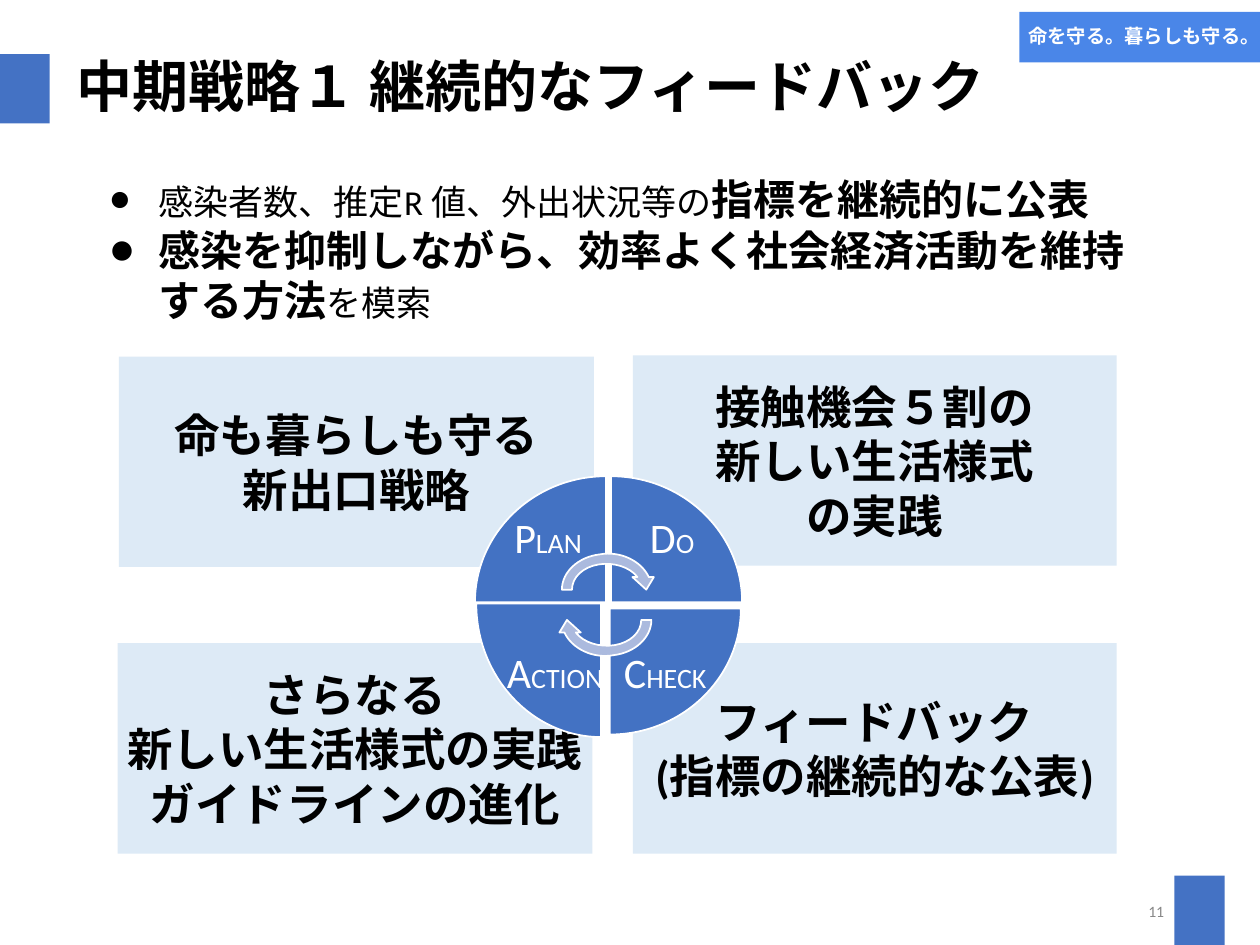
import pptx
import pptx.util
import pptx.dml.color
import pptx.enum.lang
import pptx.enum.shapes
import pptx.enum.text
import pptx.oxml
import pptx.oxml.ns

HUES = {"blue": "4472C4", "pie": "4372C3", "pale": "DDEAF6", "arrow": "ABBADE",
        "tag": "4A86E8", "ink": "000000", "grey": "888888", "white": "FFFFFF"}
CELL = pptx.util.Inches(10) // 100
ALIGN = pptx.enum.text.PP_ALIGN
ANCHOR = pptx.enum.text.MSO_ANCHOR

CARDS = [
    ((9.44, 28.3, 37.7, 16.7), ["命も暮らしも守る", "新出口戦略"]),
    ((50.23, 51.05, 38.4, 16.7), ["フィードバック", "(指標の継続的な公表)"]),
    ((9.33, 51.05, 37.7, 16.7), ["さらなる", "新しい生活様式の実践", "ガイドラインの進化"]),
    ((50.23, 28.2, 38.4, 16.7), ["接触機会５割の", "新しい生活様式", "の実践"]),
]
PIES = [
    ((48.1, 47.8), (-10.4, -10), (38.9, 40.7, 9.2, 7.1), "PLAN"),
    ((48.5, 47.8), (10.4, -10), (48.5, 40.7, 9.7, 7.1), "DO"),
    ((48.4, 48.3), (10.4, 10), (47.6, 48.3, 10.4, 7.1), "CHECK"),
    ((47.7, 47.9), (-9.9, 10.6), (38.3, 48.3, 11.5, 7.1), "ACTION"),
]
BEND = [
    [(44.6, 46.8)],
    [(44.6, 45.4), (45.9, 44.2), (47.6, 44)],
    [(49.2, 43.7), (50.9, 44.5), (51.5, 45.8)],
    [(51.9, 45.8)], [(51.3, 46.8)], [(50.2, 45.8)], [(50.6, 45.8)],
    [(50, 45), (48.7, 44.6), (47.5, 44.8)],
    [(46.3, 45), (45.4, 45.8), (45.4, 46.8)],
]


def color(name):
    """Return the named colour."""
    return pptx.dml.color.RGBColor.from_string(HUES[name])


def place(box):
    """Turn grid cells into slide lengths."""
    return [round(n * CELL) for n in box]


def write(shape, paras, size=18, hue="ink", bold=False, align=ALIGN.LEFT,
          anchor=ANCHOR.MIDDLE, inset=(0.7, 0.3), lead=None, bullet=None):
    """Fill a shape with paragraphs of strings or (text, size, bold) runs."""
    frame = shape.text_frame
    frame.word_wrap = True
    frame.vertical_anchor = anchor
    frame.margin_left = frame.margin_right = round(inset[0] * CELL)
    frame.margin_top = frame.margin_bottom = round(inset[1] * CELL)
    for i, para in enumerate(paras):
        line = frame.add_paragraph() if i else frame.paragraphs[0]
        line.alignment = align
        if lead:
            line.line_spacing = lead
        if bullet:
            mark(line, bullet)
        for words, points, heavy in [(para, size, bold)] if isinstance(para, str) else para:
            run = line.add_run()
            run.text = words
            font = run.font
            font.name = "Calibri"
            font.size = pptx.util.Pt(points)
            font.bold = heavy
            font.color.rgb = color(hue)
            font.language_id = pptx.enum.lang.MSO_LANGUAGE_ID.JAPANESE


def mark(line, sign):
    """Give a paragraph a bullet with a hanging indent."""
    props = line._p.get_or_add_pPr()
    props.set("marL", str(5 * CELL))
    props.set("indent", str(round(-3.9 * CELL)))
    space = pptx.oxml.ns.nsdecls("a")
    for part in (f'<a:buClr {space}><a:srgbClr val="{HUES["ink"]}"/></a:buClr>',
                 f'<a:buFont {space} typeface="Calibri"/>',
                 f'<a:buChar {space} char="{sign}"/>'):
        props.append(pptx.oxml.parse_xml(part))


def paint(shape, fill, edge=None):
    """Set a flat fill and an optional thin edge."""
    shape.shadow.inherit = False
    shape.fill.solid()
    shape.fill.fore_color.rgb = color(fill)
    if edge:
        shape.line.color.rgb = color(edge)
        shape.line.width = pptx.util.Pt(1)
    else:
        shape.line.fill.background()


def block(slide, box, fill):
    """Add a plain rectangle."""
    kind = pptx.enum.shapes.MSO_SHAPE.RECTANGLE
    shape = slide.shapes.add_shape(kind, *place(box))
    paint(shape, fill)
    return shape


def label(slide, box, paras, **style):
    """Add a text box."""
    write(slide.shapes.add_textbox(*place(box)), paras, **style)


def trace(slide, steps, fill):
    """Add a closed outline whose one-point steps are lines and three-point steps curves."""
    pen = slide.shapes.build_freeform(*place(steps[0][0]), scale=1.0)
    pen.add_line_segments([place(p) for step in steps[1:] for p in step], close=True)
    shape = pen.convert_to_shape()
    paint(shape, fill, "white")
    lines = iter(shape._element.findall(".//" + pptx.oxml.ns.qn("a:lnTo")))
    for step in steps[1:]:
        spans = [next(lines) for _ in step]
        if len(spans) == 3:
            curve = pptx.oxml.parse_xml(f'<a:cubicBezTo {pptx.oxml.ns.nsdecls("a")}/>')
            spans[0].addprevious(curve)
            for span in spans:
                curve.append(span[0])
                span.getparent().remove(span)


def wedge(slide, hub, reach, fill):
    """Add a quarter of an ellipse around its hub."""
    def spot(across, down):
        """Return a point at shares of the reach."""
        return hub[0] + across * reach[0], hub[1] + down * reach[1]

    trace(slide, [[spot(1, 0)], [spot(1, 0.55), spot(0.55, 1), spot(0, 1)], [hub]], fill)


def cycle(slide):
    """Draw the four-step wheel with its labels and arrows."""
    for hub, reach, box, word in PIES:
        wedge(slide, hub, reach, "pie")
        anchor, gap = (ANCHOR.TOP, 0.35) if reach[1] < 0 else (ANCHOR.BOTTOM, 0)
        label(slide, box, [[(word[0], 24, False), (word[1:], 16, False)]],
              hue="white", align=ALIGN.CENTER, inset=(0.8, gap), lead=0.9, anchor=anchor)
    trace(slide, BEND, "arrow")
    trace(slide, [[(96.3 - x, 96 - y) for x, y in step] for step in BEND], "arrow")


def main():
    """Build the slide and save it."""
    deck = pptx.Presentation()
    deck.slide_width, deck.slide_height = 100 * CELL, 75 * CELL
    slide = deck.slides.add_slide(deck.slide_layouts[6])
    block(slide, (93.2, 69.5, 4, 5.5), "blue")
    block(slide, (-0.05, 4.3, 4, 5.5), "blue")
    for box, lines in CARDS:
        write(block(slide, box, "pale"), lines, size=26, bold=True, align=ALIGN.CENTER)
    label(slide, (70.6, 70.3, 22.5, 4), ["11"], size=9, hue="grey", align=ALIGN.RIGHT)
    cycle(slide)
    label(slide, (5.4, 4.1, 86.2, 5.9), ["中期戦略１ 継続的なフィードバック"],
          size=32, bold=True, lead=0.9)
    label(slide, (6.6, 12.8, 86.2, 12.4), [
        [("感染者数、推定R 値、外出状況等の", 20, False), ("指標を継続的に公表", 24, True)],
        [("感染を抑制しながら、効率よく社会経済活動を維持する方法", 24, True),
         ("を模索", 20, False)],
    ], anchor=ANCHOR.TOP, inset=(1, 1), bullet="●")
    write(block(slide, (80.9, 0.95, 19.9, 4), "tag"), ["命を守る。暮らしも守る。"],
          size=11, hue="white", bold=True, lead=0.9)
    deck.save("out.pptx")


if __name__ == "__main__":
    main()
